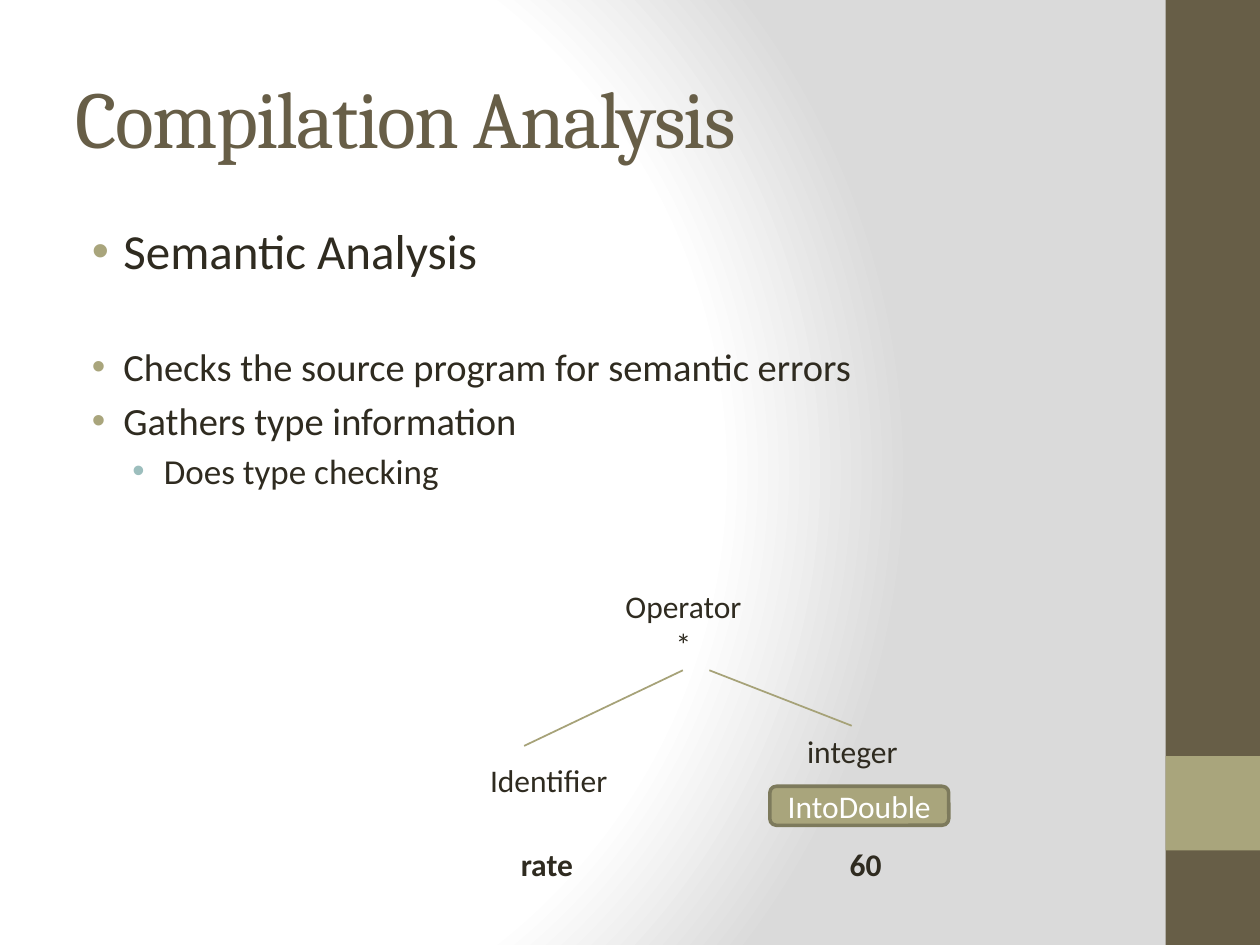
from dataclasses import dataclass

from lxml.etree import SubElement
from pptx import Presentation
from pptx.dml.color import RGBColor
from pptx.enum.shapes import MSO_CONNECTOR, MSO_SHAPE
from pptx.enum.text import MSO_ANCHOR, MSO_AUTO_SIZE, PP_ALIGN
from pptx.oxml import parse_xml
from pptx.oxml.ns import nsdecls, qn
from pptx.util import Inches, Pt


@dataclass(frozen=True)
class Theme:
    heading_font: str = "Cambria"
    body_font: str = "Calibri"
    brown: str = "675E47"
    olive: str = "A9A57C"
    olive_edge: str = "7D7A5C"
    branch: str = "A6A278"
    teal: str = "9CBEBD"
    ink: str = "2F2B20"
    white: str = "FFFFFF"
    gray: str = "DADADA"
    title_size: int = 46
    topic_size: int = 28
    point_size: int = 22
    detail_size: int = 20
    label_size: int = 18


THEME = Theme()


def color(value):
    return RGBColor.from_string(value)


def format_runs(paragraph, size, value=THEME.ink, font=THEME.body_font, bold=False):
    for run in paragraph.runs:
        run.font.name = font
        run.font.size = Pt(size)
        run.font.bold = bold
        run.font.color.rgb = color(value)


def place(shape, left, top, width, height):
    shape.left, shape.top = Inches(left), Inches(top)
    shape.width, shape.height = Inches(width), Inches(height)


def set_background(slide):
    slide.background.fill.solid()
    properties = slide.element.find(".//" + qn("p:bgPr"))
    stops = ((0, THEME.white), (75, THEME.white), (100, THEME.gray))
    stop_xml = "".join(
        f'<a:gs pos="{position * 1000}"><a:srgbClr val="{value}"/></a:gs>'
        for position, value in stops
    )
    gradient = parse_xml(
        f'<a:gradFill rotWithShape="1" {nsdecls("a")}><a:gsLst>{stop_xml}</a:gsLst>'
        '<a:path path="circle">'
        '<a:fillToRect l="20000" t="50000" r="100000" b="50000"/>'
        "</a:path></a:gradFill>"
    )
    properties.replace(properties[0], gradient)


def add_block(slide, kind, bounds, fill, edge=None):
    shape = slide.shapes.add_shape(kind, *map(Inches, bounds))
    shape.shadow.inherit = False
    shape.fill.solid()
    shape.fill.fore_color.rgb = color(fill)
    if edge:
        shape.line.color.rgb = color(edge)
        shape.line.width = Pt(2)
    else:
        shape.line.fill.background()
    return shape


def set_title(slide, text):
    title = slide.shapes.title
    place(title, 0.5, 0.3, 8.33, 1.25)
    frame = title.text_frame
    frame.text = text
    frame.auto_size = MSO_AUTO_SIZE.NONE
    frame.vertical_anchor = MSO_ANCHOR.MIDDLE
    paragraph = frame.paragraphs[0]
    paragraph.alignment = PP_ALIGN.LEFT
    format_runs(paragraph, THEME.title_size, THEME.brown, THEME.heading_font)
    paragraph.runs[0].font._element.set("spc", "-100")


def set_bullet(paragraph, margin, value):
    properties = paragraph._p.get_or_add_pPr()
    properties.set("marL", str(Inches(margin)))
    properties.set("indent", str(Inches(-0.25)))
    bullet_color = SubElement(properties, qn("a:buClr"))
    SubElement(bullet_color, qn("a:srgbClr"), val=value)
    SubElement(properties, qn("a:buFont"), typeface="Arial")
    SubElement(properties, qn("a:buChar"), char="•")


def set_body(slide, items):
    body = slide.placeholders[1]
    place(body, 0.5, 1.75, 8.33, 5.25)
    frame = body.text_frame
    frame.text = "\n".join(text for text, *_ in items)
    frame.auto_size = MSO_AUTO_SIZE.NONE
    for paragraph, (_, level, size, space) in zip(frame.paragraphs, items):
        paragraph.level = level
        paragraph.space_before = Pt(space)
        paragraph.line_spacing = 0.9 if size == THEME.topic_size else 1.0
        set_bullet(paragraph, (0.38, 0.7)[level], (THEME.olive, THEME.teal)[level])
        format_runs(paragraph, size)


def add_label(slide, text, bounds, bold=False):
    frame = slide.shapes.add_textbox(*map(Inches, bounds)).text_frame
    frame.text = text
    frame.word_wrap = False
    frame.auto_size = MSO_AUTO_SIZE.SHAPE_TO_FIT_TEXT
    for paragraph in frame.paragraphs:
        paragraph.alignment = PP_ALIGN.CENTER
        format_runs(paragraph, THEME.label_size, bold=bold)


def add_branch(slide, start, end):
    line = slide.shapes.add_connector(
        MSO_CONNECTOR.STRAIGHT, *map(Inches, (*start, *end))
    )
    line.line.color.rgb = color(THEME.branch)
    line.line.width = Pt(1)
    SubElement(line._element.spPr, qn("a:effectLst"))


def add_conversion(slide, text, bounds):
    shape = add_block(
        slide, MSO_SHAPE.ROUNDED_RECTANGLE, bounds, THEME.olive, THEME.olive_edge
    )
    frame = shape.text_frame
    frame.text = text
    frame.vertical_anchor = MSO_ANCHOR.MIDDLE
    frame.paragraphs[0].alignment = PP_ALIGN.CENTER
    format_runs(frame.paragraphs[0], THEME.label_size, THEME.white)


def main():
    presentation = Presentation()
    presentation.slide_width, presentation.slide_height = Inches(10), Inches(7.5)
    slide = presentation.slides.add_slide(presentation.slide_layouts[1])

    # Background and side band
    set_background(slide)
    add_block(slide, MSO_SHAPE.RECTANGLE, (9.25, 0, 0.75, 7.5), THEME.brown)
    add_block(slide, MSO_SHAPE.RECTANGLE, (9.25, 6, 0.75, 0.75), THEME.olive)

    # Title and bullets: text, level, size, space before
    set_title(slide, "Compilation Analysis")
    set_body(slide, (
        ("Semantic Analysis", 0, THEME.topic_size, 0),
        ("Checks the source program for semantic errors", 0, THEME.point_size, 36),
        ("Gathers type information", 0, THEME.point_size, 4.4),
        ("Does type checking", 1, THEME.detail_size, 4),
    ))

    # Syntax tree
    add_label(slide, "Operator\n*", (4.86, 4.61, 1.13, 0.71))
    add_label(slide, "Identifier", (3.78, 5.99, 1.15, 0.4))
    add_label(slide, "rate", (4.03, 6.66, 0.62, 0.4), bold=True)
    add_label(slide, "integer", (6.3, 5.76, 0.93, 0.4))
    add_label(slide, "60", (6.64, 6.66, 0.46, 0.4), bold=True)
    add_branch(slide, (5.42, 5.32), (4.16, 5.92))
    add_branch(slide, (5.63, 5.32), (6.76, 5.76))
    add_conversion(slide, "IntoDouble", (6.11, 6.24, 1.42, 0.31))

    presentation.save("out.pptx")


if __name__ == "__main__":
    main()
